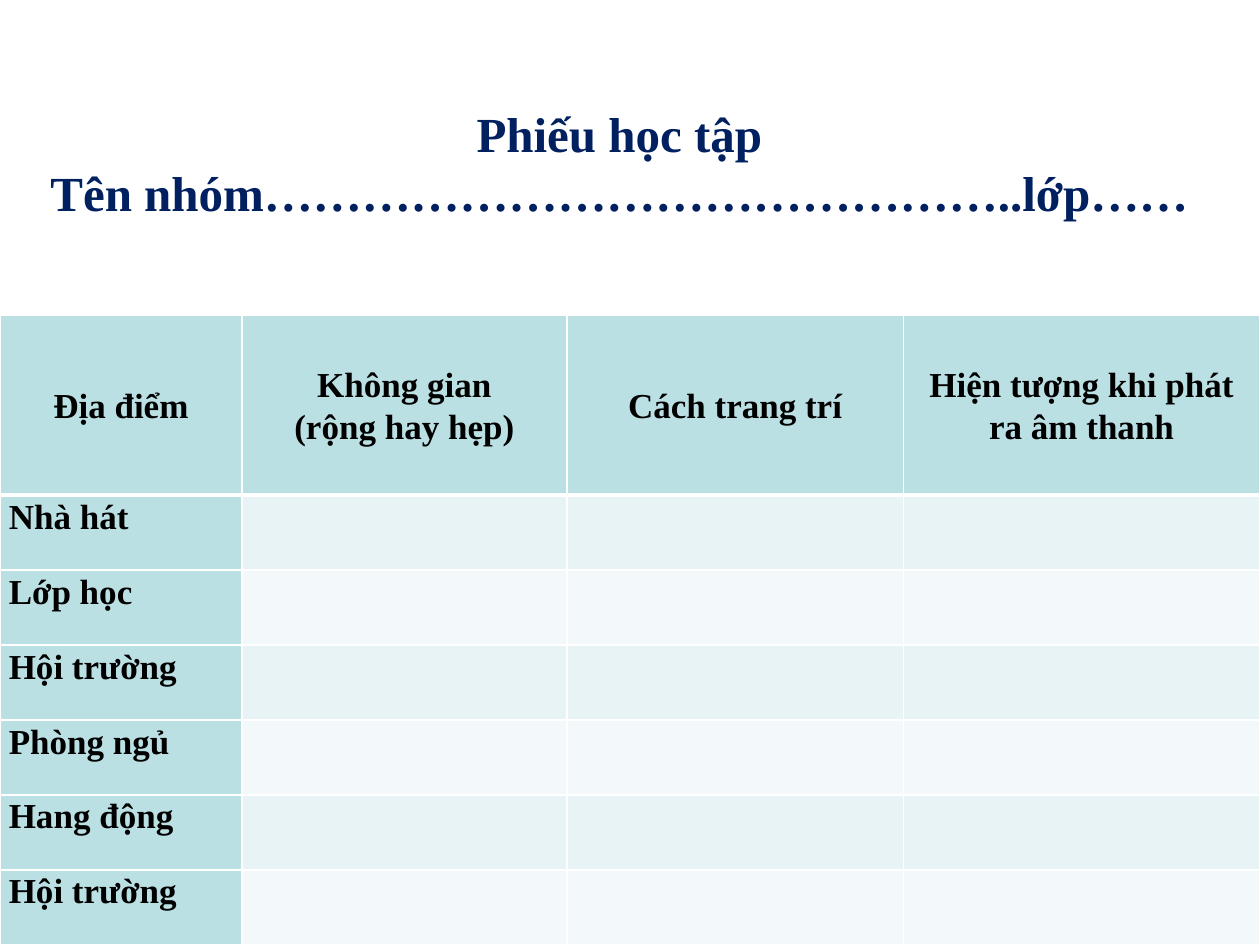
import pptx
import pptx.dml.color
import pptx.enum.text
import pptx.oxml
import pptx.oxml.ns
import pptx.util

Inches = pptx.util.Inches
Pt = pptx.util.Pt
RGB = pptx.dml.color.RGBColor.from_string
ALIGN = pptx.enum.text.PP_ALIGN
ANCHOR = pptx.enum.text.MSO_ANCHOR

# Content
TITLE = ["Phiếu học tập", "Tên nhóm………………………………………..lớp……"]
HEADERS = [
    ["Địa điểm"],
    ["Không gian", "(rộng hay hẹp)"],
    ["Cách trang trí"],
    ["Hiện tượng khi phát ra âm thanh"],
]
PLACES = ["Nhà hát", "Lớp học", "Hội trường", "Phòng ngủ", "Hang động", "Hội trường"]

# Theme and layout
THEME = {
    "font": "Times New Roman",
    "title_size": 28, "title_color": "002060",
    "cell_size": 20, "cell_color": "000000",
    "label_fill": "BBE0E3", "bands": ["E7F3F4", "F3F9FA"],
    "border": "FFFFFF", "thin": 1, "thick": 3,
}
TITLE_BOX = (0.25, 0.77, 9.33, 1.04)
TABLE_BOX = (0, 2.5, 10, 5)
COLUMN_WIDTHS = [1.92, 2.58, 2.67, 2.83]
HEADER_HEIGHT = 1.43
CELL_MARGINS = {"margin_left": 0.07, "margin_right": 0.07, "margin_top": 0, "margin_bottom": 0}


def write_lines(text_frame, lines, kind, alignment, spacing=1.0):
    font_format = {"name": THEME["font"], "size": Pt(THEME[kind + "_size"]), "bold": True}
    for index, line in enumerate(lines):
        paragraph = text_frame.paragraphs[0] if index == 0 else text_frame.add_paragraph()
        paragraph.alignment = alignment
        paragraph.line_spacing = spacing
        run = paragraph.add_run()
        run.text = line
        for name, value in font_format.items():
            setattr(run.font, name, value)
        run.font.color.rgb = RGB(THEME[kind + "_color"])


def set_borders(cell, top, bottom):
    widths = {"L": THEME["thin"], "R": THEME["thin"], "T": top, "B": bottom}
    properties = cell._tc.get_or_add_tcPr()
    for side, width in widths.items():
        properties.append(pptx.oxml.parse_xml(
            f'<a:ln{side} {pptx.oxml.ns.nsdecls("a")} w="{Pt(width)}"><a:solidFill>'
            f'<a:srgbClr val="{THEME["border"]}"/></a:solidFill></a:ln{side}>'))


def add_title(slide):
    title = slide.shapes.title
    title.left, title.top, title.width, title.height = map(Inches, TITLE_BOX)
    frame_format = {
        "word_wrap": False,
        "auto_size": pptx.enum.text.MSO_AUTO_SIZE.SHAPE_TO_FIT_TEXT,
        "vertical_anchor": ANCHOR.TOP,
    }
    for name, value in frame_format.items():
        setattr(title.text_frame, name, value)
    write_lines(title.text_frame, TITLE, "title", ALIGN.CENTER)


def add_worksheet(slide):
    rows = [HEADERS] + [[[place], [], [], []] for place in PLACES]
    table = slide.shapes.add_table(len(rows), len(HEADERS), *map(Inches, TABLE_BOX)).table
    for column, width in zip(table.columns, COLUMN_WIDTHS):
        column.width = Inches(width)
    body_height = (TABLE_BOX[3] - HEADER_HEIGHT) / len(PLACES)

    for row_index, row in enumerate(rows):
        is_header = row_index == 0
        table.rows[row_index].height = Inches(HEADER_HEIGHT if is_header else body_height)
        for column_index, lines in enumerate(row):
            cell = table.cell(row_index, column_index)
            # The line under the header is thick, seen from both rows
            set_borders(cell,
                        top=THEME["thick" if row_index == 1 else "thin"],
                        bottom=THEME["thick" if is_header else "thin"])
            is_label = is_header or column_index == 0
            band = THEME["bands"][(row_index - 1) % 2]
            cell.fill.solid()
            cell.fill.fore_color.rgb = RGB(THEME["label_fill"] if is_label else band)
            if not lines:
                continue
            for name, value in CELL_MARGINS.items():
                setattr(cell, name, Inches(value))
            cell.vertical_anchor = ANCHOR.MIDDLE if is_header else ANCHOR.TOP
            alignment = ALIGN.CENTER if is_header else ALIGN.JUSTIFY
            write_lines(cell.text_frame, lines, "cell", alignment, 1.07)


def main():
    presentation = pptx.Presentation()
    presentation.slide_width, presentation.slide_height = Inches(10), Inches(7.5)
    slide = presentation.slides.add_slide(presentation.slide_layouts.get_by_name("Title Only"))
    add_worksheet(slide)
    add_title(slide)
    presentation.save("out.pptx")


if __name__ == "__main__":
    main()
